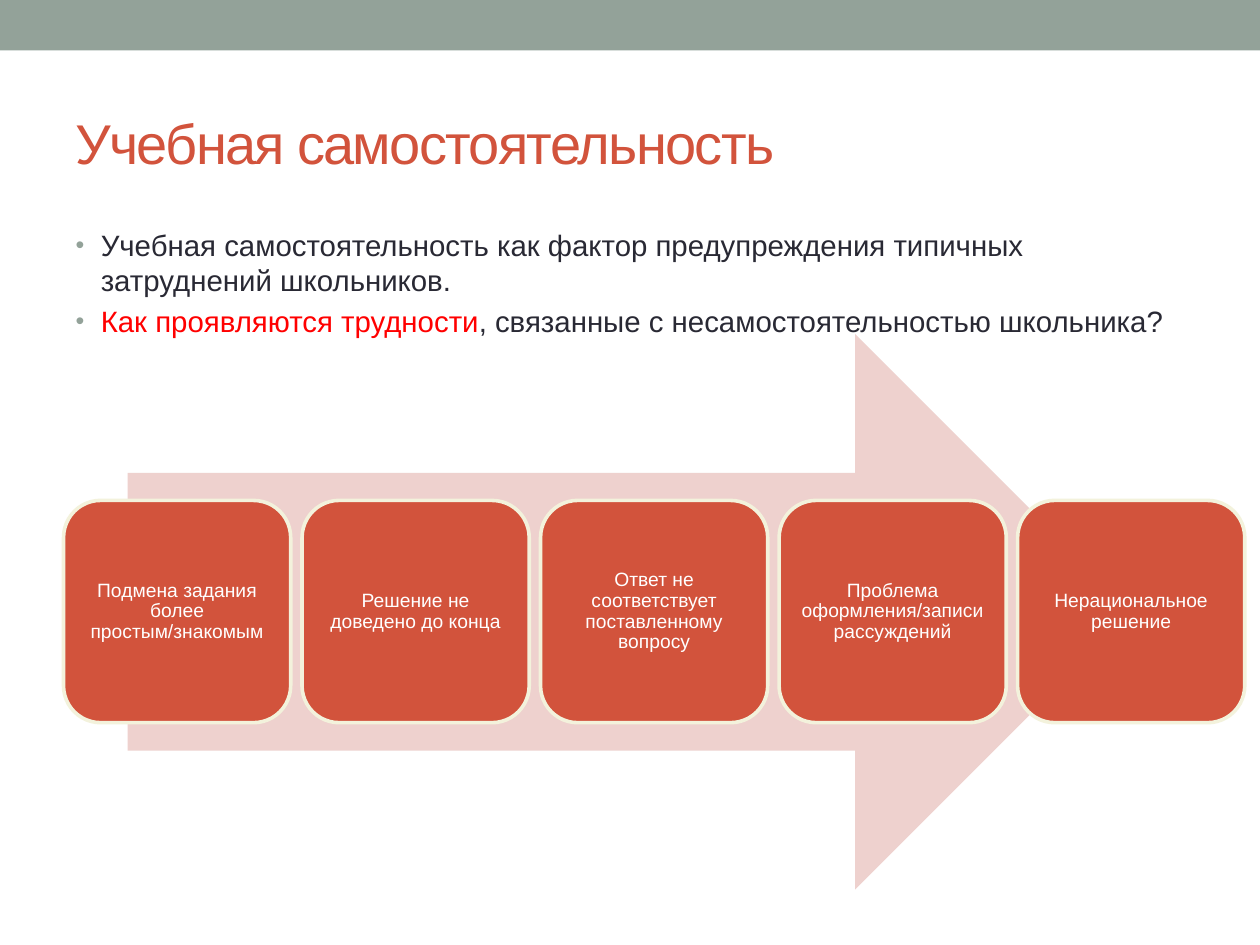
from lxml.etree import SubElement
from pptx import Presentation
from pptx.dml.color import RGBColor
from pptx.enum.shapes import MSO_SHAPE
from pptx.enum.text import MSO_ANCHOR, MSO_AUTO_SIZE, PP_ALIGN
from pptx.oxml.ns import qn
from pptx.util import Pt

HUES = {"band": "93A299", "main": "D2533C", "ink": "292934", "mark": "FF0000",
        "arrow": "EED1CE", "edge": "F3F2DC", "white": "FFFFFF"}


def apply(item, form):
    for name, value in form.items():
        setattr(item, name, value)


class Deck:
    font = "Arial"

    def __init__(self):
        self.prs = Presentation()
        apply(self.prs, {"slide_width": Pt(720), "slide_height": Pt(540)})
        self.slide = self.prs.slides.add_slide(self.prs.slide_layouts[1])

    def hue(self, name):
        return RGBColor.from_string(HUES[name])

    def place(self, item, left, top, width, height):
        apply(item, {"left": Pt(left), "top": Pt(top),
                     "width": Pt(width), "height": Pt(height)})

    def run(self, para, text, size, hue):
        run = para.add_run()
        run.text = text
        apply(run.font, {"name": self.font, "size": Pt(size)})
        run.font.color.rgb = self.hue(hue)
        return run

    def title(self, text, box):
        item = self.slide.shapes.title
        self.place(item, *box)
        frame = item.text_frame
        apply(frame, {"vertical_anchor": MSO_ANCHOR.MIDDLE, "word_wrap": True,
                      "auto_size": MSO_AUTO_SIZE.NONE})
        para = frame.paragraphs[0]
        para.alignment = PP_ALIGN.LEFT
        run = self.run(para, text, 32, "main")
        run.font._element.set("spc", "-100")

    def bullet(self, para):
        props = para._p.get_or_add_pPr()
        for name, value in {"marL": Pt(14.4), "indent": Pt(-14.4)}.items():
            props.set(name, str(value))
        tint = SubElement(props, qn("a:buClr"))
        SubElement(tint, qn("a:srgbClr"), val=HUES["band"])
        SubElement(props, qn("a:buSzPct"), val="85000")
        SubElement(props, qn("a:buFont"), typeface=self.font)
        SubElement(props, qn("a:buChar"), char="•")

    def body(self, rows, box):
        item = self.slide.placeholders[1]
        self.place(item, *box)
        frame = item.text_frame
        apply(frame, {"word_wrap": True, "auto_size": MSO_AUTO_SIZE.NONE})
        for i, row in enumerate(rows):
            para = frame.add_paragraph() if i else frame.paragraphs[0]
            para.space_before = Pt(3.4)
            self.bullet(para)
            for text, hue in row:
                self.run(para, text, 16.8, hue)

    def shape(self, kind, box, fill, edge=None):
        item = self.slide.shapes.add_shape(kind, *map(Pt, box))
        item.shadow.inherit = False
        item.fill.solid()
        item.fill.fore_color.rgb = self.hue(fill)
        if edge:
            item.line.color.rgb = self.hue(edge)
            item.line.width = Pt(2.08)
        else:
            item.line.fill.background()
        return item

    def card(self, text, box):
        item = self.shape(MSO_SHAPE.ROUNDED_RECTANGLE, box, "main", "edge")
        frame = item.text_frame
        apply(frame, {"word_wrap": True, "vertical_anchor": MSO_ANCHOR.MIDDLE})
        sides = ("left", "top", "right", "bottom")
        apply(frame, {f"margin_{side}": Pt(3.3) for side in sides})
        para = frame.paragraphs[0]
        apply(para, {"alignment": PP_ALIGN.CENTER, "line_spacing": 0.9})
        self.run(para, text, 11, "white")


def main():
    deck = Deck()

    # Top band and heading
    deck.shape(MSO_SHAPE.RECTANGLE, (0, 0, 720, 28.8), "band")
    deck.title("Учебная самостоятельность", (36, 42, 648, 78))

    # Bullet list
    deck.body([
        [("Учебная самостоятельность как фактор предупреждения типичных "
          "затруднений школьников.", "ink")],
        [("Как проявляются трудности", "mark"),
         (", связанные с несамостоятельностью школьника?", "ink")],
    ], (36, 126, 648, 76.5))

    # Arrow behind the row of cards
    deck.shape(MSO_SHAPE.RIGHT_ARROW, (72.9, 190.8, 574.5, 317.5), "arrow")

    # Cards at an even step
    cards = ["Подмена задания более простым/знакомым",
             "Решение не доведено до конца",
             "Ответ не соответствует поставленному вопросу",
             "Проблема оформления/записи рассуждений",
             "Нерациональное решение"]
    left, step = 36.3, 136.3
    for i, text in enumerate(cards):
        deck.card(text, (left + i * step, 286, 129.8, 127))

    deck.prs.save("out.pptx")


if __name__ == "__main__":
    main()
